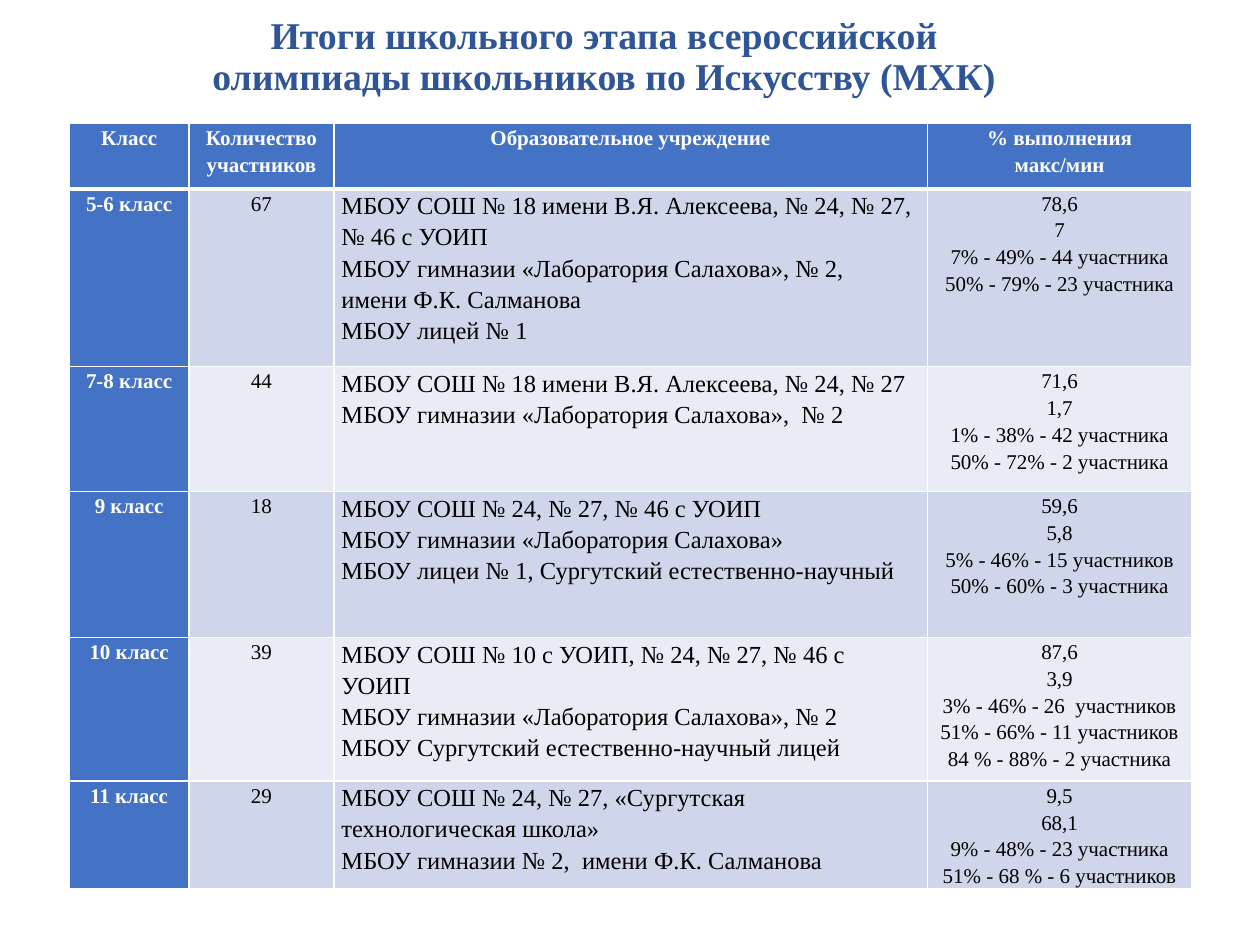
from lxml import etree
from pptx import Presentation
from pptx.dml.color import RGBColor
from pptx.enum.text import MSO_ANCHOR, MSO_AUTO_SIZE, PP_ALIGN
from pptx.oxml.ns import qn
from pptx.util import Inches, Pt

CENTER, LEFT = PP_ALIGN.CENTER, PP_ALIGN.LEFT
MIDDLE = MSO_ANCHOR.MIDDLE
NO_FIT = MSO_AUTO_SIZE.NONE

FONT = "Times New Roman"
NAVY = RGBColor(0x2F, 0x55, 0x97)
BLUE = RGBColor(0x44, 0x72, 0xC4)
BAND_DARK = RGBColor(0xCF, 0xD5, 0xEA)
BAND_LIGHT = RGBColor(0xE9, 0xEB, 0xF5)
WHITE = RGBColor(0xFF, 0xFF, 0xFF)
BLACK = RGBColor(0x00, 0x00, 0x00)

TITLE = "Итоги школьного этапа всероссийской олимпиады школьников по Искусству (МХК)"
COL_WIDTHS = [0.95, 1.15, 4.71, 2.1]
ROW_HEIGHTS = [0.52, 1.41, 0.99, 1.16, 1.14, 0.5]
SCHOOL_COL = 2
RESULTS = [
    ["Класс", "Количество участников", "Образовательное учреждение",
     "% выполнения\nмакс/мин"],
    ["5-6 класс", "67",
     "МБОУ СОШ № 18 имени В.Я. Алексеева, № 24, № 27, № 46 с УОИП\n"
     "МБОУ гимназии «Лаборатория Салахова», № 2,  имени Ф.К. Салманова\n"
     "МБОУ лицей № 1",
     "78,6\n7\n7% - 49% - 44 участника\n50% - 79% - 23 участника"],
    ["7-8 класс", "44",
     "МБОУ СОШ № 18 имени В.Я. Алексеева, № 24, № 27\n"
     "МБОУ гимназии «Лаборатория Салахова»,  № 2",
     "71,6\n1,7\n1% - 38% - 42 участника\n50% - 72% - 2 участника"],
    ["9 класс", "18",
     "МБОУ СОШ № 24, № 27, № 46 с УОИП\n"
     "МБОУ гимназии «Лаборатория Салахова»\n"
     "МБОУ лицеи № 1, Сургутский естественно-научный",
     "59,6\n5,8\n5% - 46% - 15 участников\n50% - 60% - 3 участника"],
    ["10 класс", "39",
     "МБОУ СОШ № 10 с УОИП, № 24, № 27, № 46 с УОИП\n"
     "МБОУ гимназии «Лаборатория Салахова», № 2\n"
     "МБОУ Сургутский естественно-научный лицей",
     "87,6\n3,9\n3% - 46% - 26  участников\n51% - 66% - 11 участников\n"
     "84 % - 88% - 2 участника"],
    ["11 класс", "29",
     "МБОУ СОШ № 24, № 27, «Сургутская технологическая школа»\n"
     "МБОУ гимназии № 2,  имени Ф.К. Салманова",
     "9,5\n68,1\n9% - 48% - 23 участника\n51% - 68 % - 6 участников"],
]


def format_paragraph(p, size, color, bold, align, spacing):
    p.alignment = align
    p.line_spacing = spacing
    p.font.name = FONT
    p.font.size = Pt(size)
    p.font.bold = bold
    p.font.color.rgb = color


def set_borders(cell, bottom_width):
    tc_pr = cell._tc.get_or_add_tcPr()
    sides = [("a:lnL", 1), ("a:lnR", 1), ("a:lnT", 1), ("a:lnB", bottom_width)]
    for i, (side, width) in enumerate(sides):
        line = etree.Element(qn(side), w=str(Pt(width)))
        fill = etree.SubElement(line, qn("a:solidFill"))
        etree.SubElement(fill, qn("a:srgbClr"), val=str(WHITE))
        tc_pr.insert(i, line)


def fill_cell(cell, text, row, col):
    accent = row == 0 or col == 0
    band = BAND_DARK if row % 2 else BAND_LIGHT
    cell.fill.solid()
    cell.fill.fore_color.rgb = BLUE if accent else band
    set_borders(cell, 1 if row else 3)
    cell.margin_left = cell.margin_right = Inches(0.06)
    cell.margin_top = cell.margin_bottom = 0
    is_school = row > 0 and col == SCHOOL_COL
    cell.text_frame.text = text
    for p in cell.text_frame.paragraphs:
        format_paragraph(p, 14 if is_school else 12, WHITE if accent else BLACK,
                         accent, LEFT if is_school else CENTER, 1.15)


def place_title(s, left, top, width, height):
    title = s.shapes.title
    title.left, title.top, title.width, title.height = left, top, width, height
    tf = title.text_frame
    tf.text = TITLE
    tf.word_wrap = True
    tf.auto_size = NO_FIT
    tf.vertical_anchor = MIDDLE
    format_paragraph(tf.paragraphs[0], 21.6, NAVY, True, CENTER, 0.9)


def place_results(s, left, top, width, height):
    frame = s.shapes.add_table(len(RESULTS), len(COL_WIDTHS), left, top, width, height)
    table = frame.table
    for column, w in zip(table.columns, COL_WIDTHS):
        column.width = Inches(w)
    for row, h in zip(table.rows, ROW_HEIGHTS):
        row.height = Inches(h)
    frame.height = height
    for i, values in enumerate(RESULTS):
        for j, text in enumerate(values):
            fill_cell(table.cell(i, j), text, i, j)


def main():
    prs = Presentation()
    prs.slide_width, prs.slide_height = Inches(10), Inches(7.5)
    s = prs.slides.add_slide(prs.slide_layouts[5])
    place_title(s, Inches(1.37), 0, Inches(6.85), Inches(0.92))
    place_results(s, Inches(0.55), Inches(0.98), Inches(8.92), Inches(6.12))
    prs.save("out.pptx")


if __name__ == "__main__":
    main()
